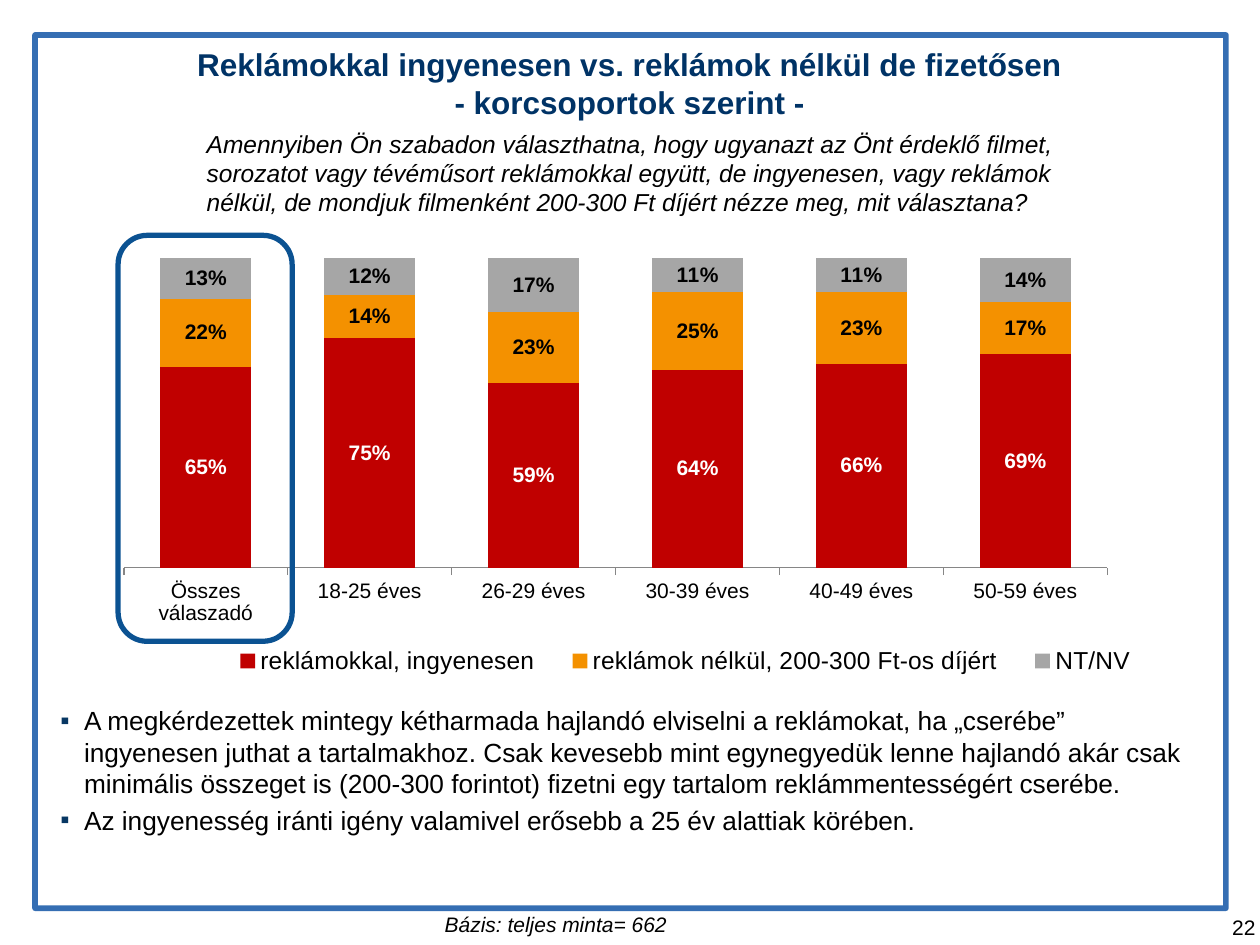
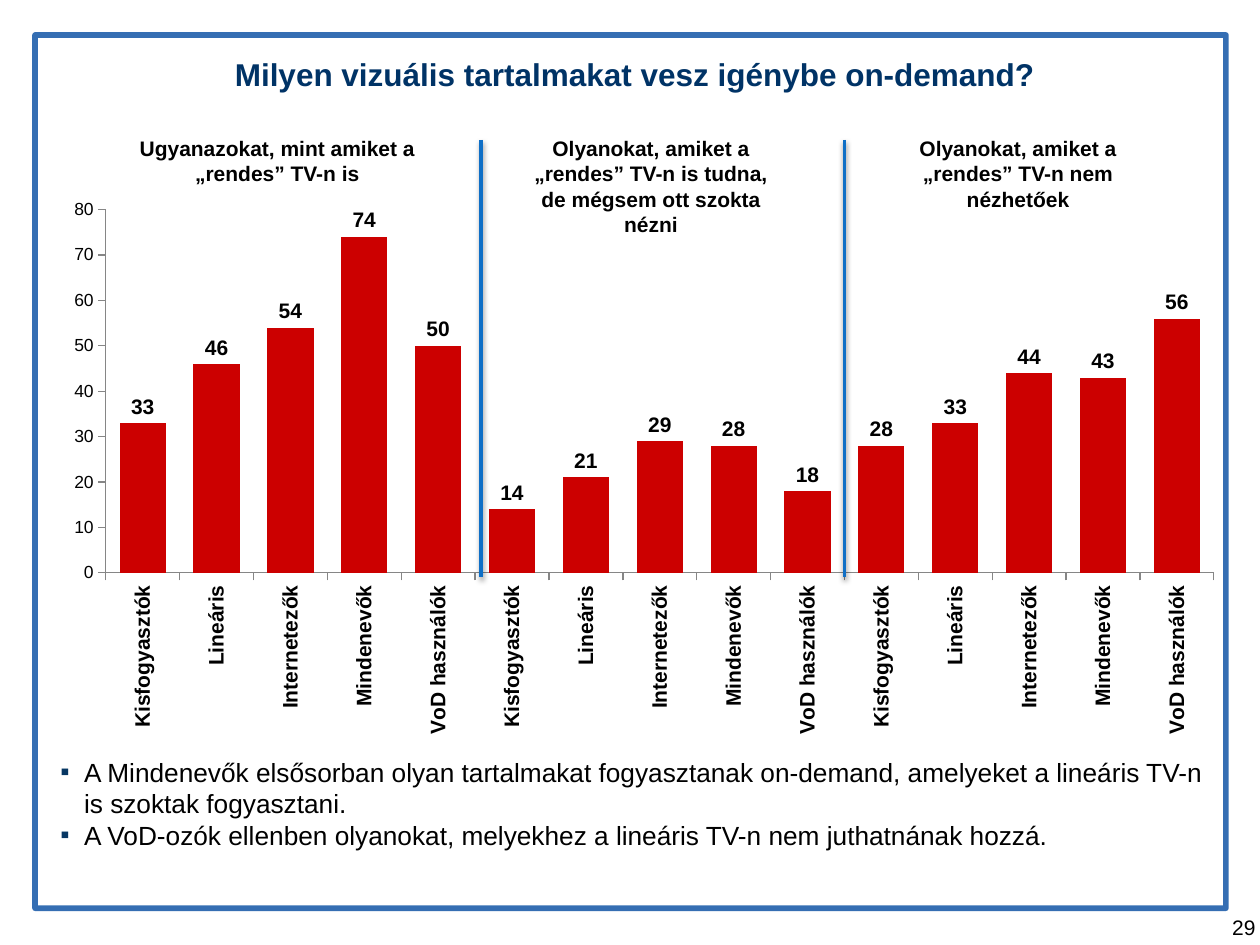
from pptx import Presentation
from pptx.chart.data import CategoryChartData
from pptx.dml.color import RGBColor
from pptx.enum import chart as ch, shapes, text
from pptx.oxml import parse_xml
from pptx.oxml.ns import nsdecls, qn
from pptx.util import Pt

FONT = "Arial"
BLACK, WHITE, NAVY, MARK = "000000", "FFFFFF", "003366", "073763"
FRAME, RING, RULE, AXIS = "094FA3", "0B5292", "0F6FC6", "868686"

AGES = {
    "page": "22",
    "title": "Reklámokkal ingyenesen vs. reklámok nélkül de fizetősen\v- korcsoportok szerint -",
    "place": (101.5, 26),
    "notes": [
        "A megkérdezettek mintegy kétharmada hajlandó elviselni a reklámokat, ha „cserébe” ingyenesen juthat a tartalmakhoz. Csak kevesebb mint egynegyedük lenne hajlandó akár csak minimális összeget is (200-300 forintot) fizetni egy tartalom reklámmentességért cserébe.",
        "Az ingyenesség iránti igény valamivel erősebb a 25 év alattiak körében.",
    ],
    "top": 399,
    "gap": 3,
}
QUERY = "Amennyiben Ön szabadon választhatna, hogy ugyanazt az Önt érdeklő filmet, sorozatot vagy tévéműsort reklámokkal együtt, de ingyenesen, vagy reklámok nélkül, de mondjuk filmenként 200-300 Ft díjért nézze meg, mit választana?"
BASE = "Bázis: teljes minta= 662"
GROUPS = ["Összes válaszadó", "18-25 éves", "26-29 éves", "30-39 éves", "40-49 éves", "50-59 éves"]
SHARES = [
    ("reklámokkal, ingyenesen", [0.65, 0.75, 0.59, 0.64, 0.66, 0.69], "C00000", WHITE),
    ("reklámok nélkül, 200-300 Ft-os díjért", [0.22, 0.14, 0.23, 0.25, 0.23, 0.17], "F49100", BLACK),
    ("NT/NV", [0.13, 0.12, 0.17, 0.11, 0.11, 0.14], "A6A6A6", BLACK),
]

DEMAND = {
    "page": "29",
    "title": "Milyen vizuális tartalmakat vesz igénybe on-demand?",
    "place": (104.5, 21),
    "notes": [
        "A Mindenevők elsősorban olyan tartalmakat fogyasztanak on-demand, amelyeket a lineáris TV-n is szoktak fogyasztani.",
        "A VoD-ozók ellenben olyanokat, melyekhez a lineáris TV-n nem juthatnának hozzá.",
    ],
    "top": 428.5,
    "gap": 0,
}
USERS = ["Kisfogyasztók", "Lineáris", "Internetezők", "Mindenevők", "VoD használók"]
PANELS = [
    ("Ugyanazokat, mint amiket a „rendes” TV-n is", 70.5, 176, [33, 46, 54, 74, 50]),
    ("Olyanokat, amiket a „rendes” TV-n is tudna, de mégsem ott szokta nézni", 292.5, 159, [14, 21, 29, 28, 18]),
    ("Olyanokat, amiket a „rendes” TV-n nem nézhetőek", 491, 181.5, [28, 33, 44, 43, 56]),
]
RULES = [275, 482.5]


def hue(code):
    return RGBColor.from_string(code)


def style(font, size, code=BLACK, bold=False, slant=False):
    font.name, font.size = FONT, Pt(size)
    font.bold, font.italic = bold, slant
    font.color.rgb = hue(code)


def pts(*box):
    return [Pt(n) for n in box]


def write(slide, words, box, size, align=text.PP_ALIGN.LEFT, wrap=True, **look):
    area = slide.shapes.add_textbox(*pts(*box))
    frame = area.text_frame
    frame.word_wrap = wrap
    frame.text = words
    para = frame.paragraphs[0]
    para.alignment = align
    style(para.runs[0].font, size, **look)
    return frame


def border(slide, kind, box, code, width):
    shape = slide.shapes.add_shape(kind, *pts(*box))
    shape.shadow.inherit = False
    shape.fill.background()
    shape.line.color.rgb = hue(code)
    shape.line.width = Pt(width)
    return shape


def bullet(para):
    props = para._p.get_or_add_pPr()
    props.set("marL", str(Pt(13.5)))
    props.set("indent", str(-Pt(13.5)))
    for xml in (f'<a:buClr {nsdecls("a")}><a:srgbClr val="{MARK}"/></a:buClr>',
                f'<a:buFont {nsdecls("a")} typeface="{FONT}"/>',
                f'<a:buChar {nsdecls("a")} char="▪"/>'):
        props.append(parse_xml(xml))


def start(deck, info):
    slide = deck.slides.add_slide(deck.slide_layouts[5])
    frame = border(slide, shapes.MSO_SHAPE.RECTANGLE, (20, 20, 680.5, 499), FRAME, 3.25)
    tint = frame._element.spPr.find(".//" + qn("a:ln")).find(".//" + qn("a:srgbClr"))
    tint.append(parse_xml(f'<a:alpha {nsdecls("a")} val="81000"/>'))
    write(slide, info["page"], (677, 519, 47.5, 19.5), 12, text.PP_ALIGN.RIGHT)

    title = slide.shapes.title
    title.left, title.top, title.width, title.height = pts(*info["place"], 510.5, 42.5)
    body = title.text_frame
    body.text = info["title"]
    body.word_wrap = True
    body.auto_size = text.MSO_AUTO_SIZE.NONE
    body.vertical_anchor = text.MSO_ANCHOR.MIDDLE
    body.margin_left = Pt(6)
    body.margin_top = body.margin_right = body.margin_bottom = 0
    head = body.paragraphs[0]
    head.alignment = text.PP_ALIGN.CENTER
    for run in head.runs:
        style(run.font, 18, NAVY, bold=True)
    return slide


def add_notes(slide, info):
    frame = write(slide, info["notes"][0], (27.5, info["top"], 667.5, 80), 15)
    for words in info["notes"][1:]:
        para = frame.add_paragraph()
        para.text = words
        para.space_before = Pt(info["gap"])
        style(para.runs[0].font, 15)
    for para in frame.paragraphs:
        bullet(para)


def layout(x, y, w, h, inner=False):
    target = '<c:layoutTarget val="inner"/>' if inner else ""
    modes = "".join(f'<c:{k}Mode val="edge"/>' for k in "xy")
    sizes = "".join(f'<c:{k} val="{v}"/>' for k, v in zip("xywh", (x, y, w, h)))
    return parse_xml(f'<c:layout {nsdecls("c")}><c:manualLayout>{target}{modes}{sizes}'
                     '</c:manualLayout></c:layout>')


def draw(slide, kind, box, cats, rows, plan, gap, form, spot):
    data = CategoryChartData()
    data.categories = cats
    for name, vals, *_ in rows:
        data.add_series(name, vals)
    chart = slide.shapes.add_chart(kind, *pts(*box), data).chart
    chart.has_title = chart.has_legend = False
    style(chart.font, 18)
    area = chart._chartSpace.chart.plotArea
    for old in area.findall(qn("c:layout")):
        area.remove(old)
    area.insert(0, layout(*plan, inner=True))
    plot = chart.plots[0]
    plot.gap_width = gap
    plot.vary_by_categories = False
    for series, (_, _, fill, ink) in zip(plot.series, rows):
        series.format.fill.solid()
        series.format.fill.fore_color.rgb = hue(fill)
        series.invert_if_negative = False
        tags = series.data_labels
        tags.show_value = True
        tags.number_format, tags.number_format_is_linked = form, False
        tags.position = spot
        style(tags.font, 12, ink, bold=True)
    chart.value_axis.has_major_gridlines = False
    for axis in (chart.category_axis, chart.value_axis):
        axis.major_tick_mark = ch.XL_TICK_MARK.OUTSIDE
        axis.format.line.color.rgb = hue(AXIS)
    return chart


def age_slide(deck):
    slide = start(deck, AGES)
    chart = draw(slide, ch.XL_CHART_TYPE.COLUMN_STACKED_100, (35.5, 142.5, 653.5, 249),
                 GROUPS, SHARES, (0.054, 0.021, 0.86, 0.71), 80, "0%", ch.XL_LABEL_POSITION.CENTER)
    chart.plots[0].overlap = 100
    style(chart.category_axis.tick_labels.font, 12)
    scale = chart.value_axis
    scale.minimum_scale, scale.maximum_scale, scale.major_unit = 0, 1, 0.2
    scale.visible = False
    chart.has_legend = True
    key = chart.legend
    key.position = ch.XL_LEGEND_POSITION.BOTTOM
    key.include_in_layout = False
    style(key.font, 14)
    key._element.find(qn("c:overlay")).addprevious(layout(0.13, 0.89, 0.83, 0.11))

    write(slide, QUERY, (111, 70, 533, 58.5), 14, slant=True)
    write(slide, BASE, (247, 517.5, 142.5, 21.5), 12, wrap=False, slant=True)
    border(slide, shapes.MSO_SHAPE.ROUNDED_RECTANGLE, (67.5, 134.5, 99.5, 232), RING, 3)
    add_notes(slide, AGES)


def demand_slide(deck):
    slide = start(deck, DEMAND)
    vals = [v for *_, part in PANELS for v in part]
    chart = draw(slide, ch.XL_CHART_TYPE.COLUMN_CLUSTERED, (25, 49, 669, 391),
                 USERS * len(PANELS), [("Series 1", vals, "CC0000", BLACK)],
                 (0.053, 0.181, 0.947, 0.531), 60, "#,##0", ch.XL_LABEL_POSITION.OUTSIDE_END)
    names = chart.category_axis
    style(names.tick_labels.font, 12, bold=True)
    turn = names._element.find(qn("c:txPr")).find(qn("a:bodyPr"))
    turn.set("rot", "-5400000")
    turn.set("vert", "horz")
    scale = chart.value_axis
    scale.minimum_scale, scale.maximum_scale, scale.major_unit = 0, 80, 10
    style(scale.tick_labels.font, 10)
    scale.tick_labels.number_format = "0"
    scale.tick_labels.number_format_is_linked = False

    for x in RULES:
        rule = slide.shapes.add_connector(shapes.MSO_CONNECTOR.STRAIGHT, *pts(x, 80, x, 330))
        rule.line.color.rgb = hue(RULE)
        rule.line.width = Pt(2)
        rule._element.spPr.append(parse_xml(
            f'<a:effectLst {nsdecls("a")}><a:outerShdw blurRad="{Pt(3.1)}" dist="{Pt(1.6)}" '
            f'dir="5400000" rotWithShape="0"><a:srgbClr val="{BLACK}"><a:alpha val="38000"/>'
            '</a:srgbClr></a:outerShdw></a:effectLst>'))
    for words, x, width, _ in PANELS:
        write(slide, words, (x, 74, width, 36), 12, text.PP_ALIGN.CENTER, bold=True)
    add_notes(slide, DEMAND)


def main():
    deck = Presentation()
    deck.slide_width, deck.slide_height = pts(720, 540)
    age_slide(deck)
    demand_slide(deck)
    deck.save("out.pptx")


if __name__ == "__main__":
    main()
